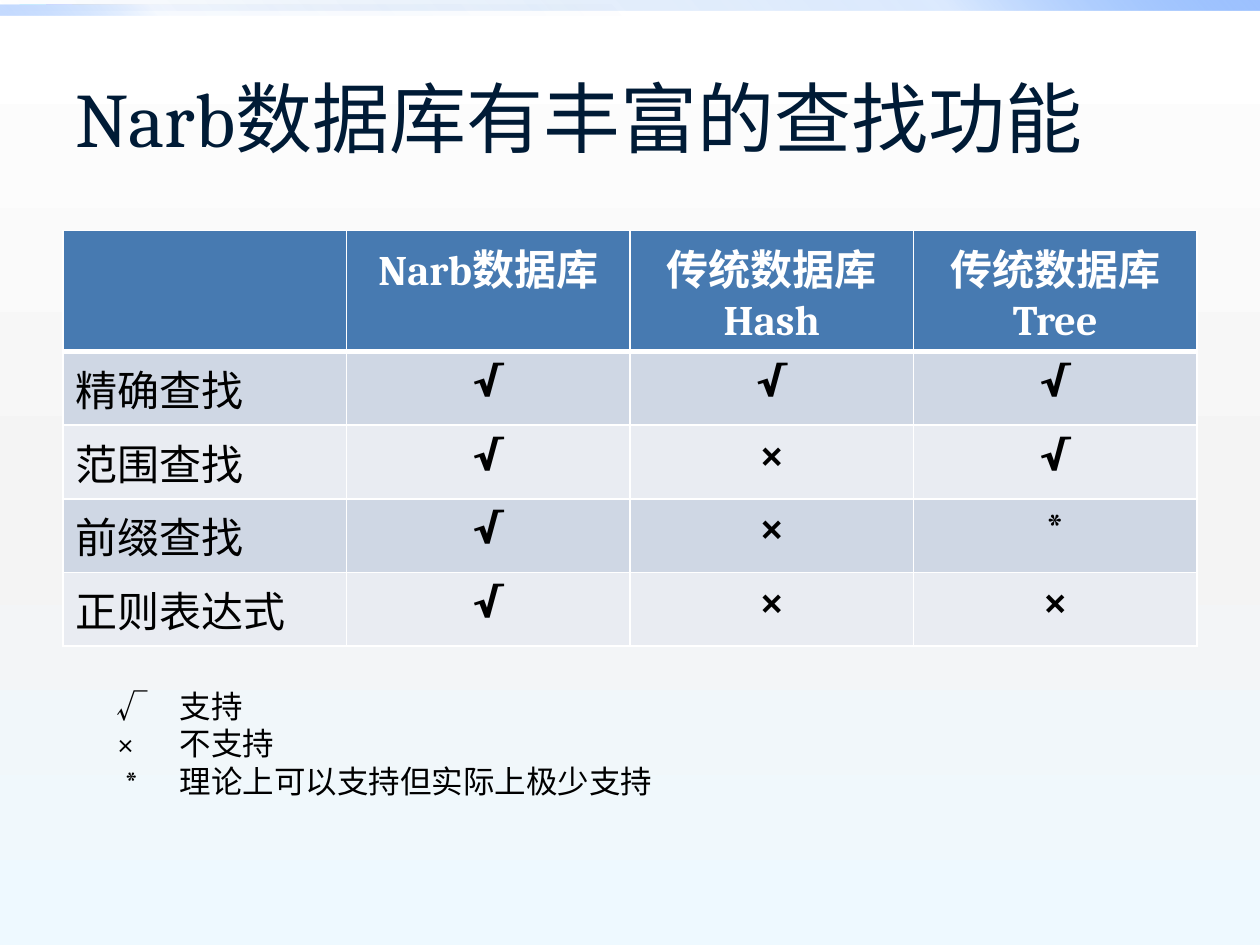
from dataclasses import dataclass

from lxml.etree import SubElement
from pptx import Presentation
from pptx.dml.color import RGBColor
from pptx.enum.shapes import MSO_SHAPE as Shape
from pptx.enum.text import MSO_ANCHOR as Anchor, PP_ALIGN as Align
from pptx.oxml.ns import qn
from pptx.util import Inches, Pt


@dataclass(frozen=True)
class Theme:
    latin: str = "Cambria"
    chinese: str = "Calibri"
    title_color: str = "001B36"
    text_color: str = "000000"
    white: str = "FFFFFF"
    header_fill: str = "477AB1"
    band_fills: tuple = ("CFD7E4", "E9ECF2")
    title_size: int = 44
    table_size: int = 24
    legend_size: int = 18
    background: tuple = ((0, "FFFFFF", 100), (55, "F4F4F4", 100), (100, "EEF9FF", 100))
    top_band: tuple = ((0, "0058B7", 0), (75, "4F95FF", 20), (100, "9EC2FF", 100))
    left_band: tuple = ((0, "0058B7", 0), (75, "4F95FF", 5), (100, "9EC2FF", 60))


THEME = Theme()
HEADERS = ("", "Narb数据库", "传统数据库\nHash", "传统数据库\nTree")
FEATURES = (
    ("精确查找", "√", "√", "√"),
    ("范围查找", "√", "×", "√"),
    ("前缀查找", "√", "×", "*"),
    ("正则表达式", "√", "×", "×"),
)
LEGEND = (
    ("√", "支持", 0, 0.66),
    ("×", "不支持", 0, 0.5),
    ("*", "理论上可以支持但实际上极少支持", 0.06, 0.59),
)


def add_text(paragraph, text, size, color, font=THEME.latin, bold=False, align=Align.LEFT):
    paragraph.alignment = align
    run = paragraph.add_run()
    run.text = text
    run.font.name = font
    run.font.size = Pt(size)
    run.font.bold = bold
    run.font.color.rgb = RGBColor.from_string(color)


def set_gradient(fill, element, stops, angle):
    fill.gradient()
    fill.gradient_angle = (360 - angle) % 360
    stop_list = element.find(".//" + qn("a:gsLst"))
    for stop in list(stop_list):
        stop_list.remove(stop)
    for position, color, opacity in stops:
        stop = SubElement(stop_list, qn("a:gs"), pos=str(position * 1000))
        color_element = SubElement(stop, qn("a:srgbClr"), val=color)
        if opacity < 100:
            SubElement(color_element, qn("a:alpha"), val=str(opacity * 1000))


def add_band(slide, left, top, width, height, stops, angle):
    band = slide.shapes.add_shape(Shape.RECTANGLE, left, top, width, height)
    band.shadow.inherit = False
    band.line.fill.background()
    set_gradient(band.fill, band.element, stops, angle)


def add_text_frame(slide, left, top, width, height, anchor=Anchor.TOP):
    text_frame = slide.shapes.add_textbox(left, top, width, height).text_frame
    text_frame.word_wrap = True
    text_frame.vertical_anchor = anchor
    return text_frame


def add_title(slide, left, top, width, height):
    paragraph = add_text_frame(slide, left, top, width, height, Anchor.MIDDLE).paragraphs[0]
    for text, font in (("Narb", THEME.latin), ("数据库有丰富的查找功能", THEME.chinese)):
        add_text(paragraph, text, THEME.title_size, THEME.title_color, font=font)


def set_borders(cell, bottom_width):
    properties = cell._tc.get_or_add_tcPr()
    sides = (("a:lnL", 1), ("a:lnR", 1), ("a:lnT", 1), ("a:lnB", bottom_width))
    for index, (side, width) in enumerate(sides):
        line = SubElement(properties, qn(side), w=str(Pt(width)))
        SubElement(SubElement(line, qn("a:solidFill")), qn("a:srgbClr"), val=THEME.white)
        properties.insert(index, line)


def fill_cell(cell, text, fill, color, bold, align, bottom_width):
    cell.fill.solid()
    cell.fill.fore_color.rgb = RGBColor.from_string(fill)
    set_borders(cell, bottom_width)
    for index, line in enumerate(text.split("\n")):
        text_frame = cell.text_frame
        paragraph = text_frame.add_paragraph() if index else text_frame.paragraphs[0]
        if line:
            add_text(paragraph, line, THEME.table_size, color, bold=bold, align=align)


def add_feature_table(slide, left, top, width, height, header_height):
    rows = (HEADERS,) + FEATURES
    table = slide.shapes.add_table(len(rows), len(HEADERS), left, top, width, height).table
    for column in table.columns:
        column.width = width // len(HEADERS)
    for row_index, values in enumerate(rows):
        is_header = row_index == 0
        body_height = (height - header_height) // len(FEATURES)
        table.rows[row_index].height = header_height if is_header else body_height
        for column_index, value in enumerate(values):
            fill_cell(
                table.cell(row_index, column_index),
                value,
                fill=THEME.header_fill if is_header else THEME.band_fills[(row_index - 1) % 2],
                color=THEME.white if is_header else THEME.text_color,
                bold=is_header or column_index > 0,
                align=Align.CENTER if is_header or column_index > 0 else Align.LEFT,
                bottom_width=3 if is_header else 1,
            )


def add_legend(slide, left, top, width, height):
    text_frame = add_text_frame(slide, left, top, width, height)
    for index, (symbol, meaning, indent, tab) in enumerate(LEGEND):
        paragraph = text_frame.add_paragraph() if index else text_frame.paragraphs[0]
        properties = paragraph._p.get_or_add_pPr()
        properties.set("marL", "0")
        properties.set("indent", str(Inches(indent)))
        tab_list = SubElement(properties, qn("a:tabLst"))
        SubElement(tab_list, qn("a:tab"), pos=str(Inches(tab)), algn="l")
        add_text(paragraph, f"{symbol}\t{meaning}", THEME.legend_size, THEME.text_color)


def main():
    presentation = Presentation()
    presentation.slide_width = Inches(10)
    presentation.slide_height = Inches(7.5)
    slide = presentation.slides.add_slide(presentation.slide_layouts[6])
    set_gradient(slide.background.fill, slide.element, THEME.background, 90)
    add_band(slide, 0, 0, Inches(10), Inches(0.08), THEME.top_band, 315)
    add_band(slide, 0, Inches(0.04), Inches(5), Inches(0.08), THEME.left_band, 135)
    add_title(slide, Inches(0.5), Inches(0.3), Inches(9), Inches(1.25))
    add_feature_table(slide, Inches(0.5), Inches(1.83), Inches(9), Inches(3.3), Inches(0.96))
    add_legend(slide, Inches(0.83), Inches(5.4), Inches(4.65), Inches(1.01))
    presentation.save("out.pptx")


if __name__ == "__main__":
    main()
